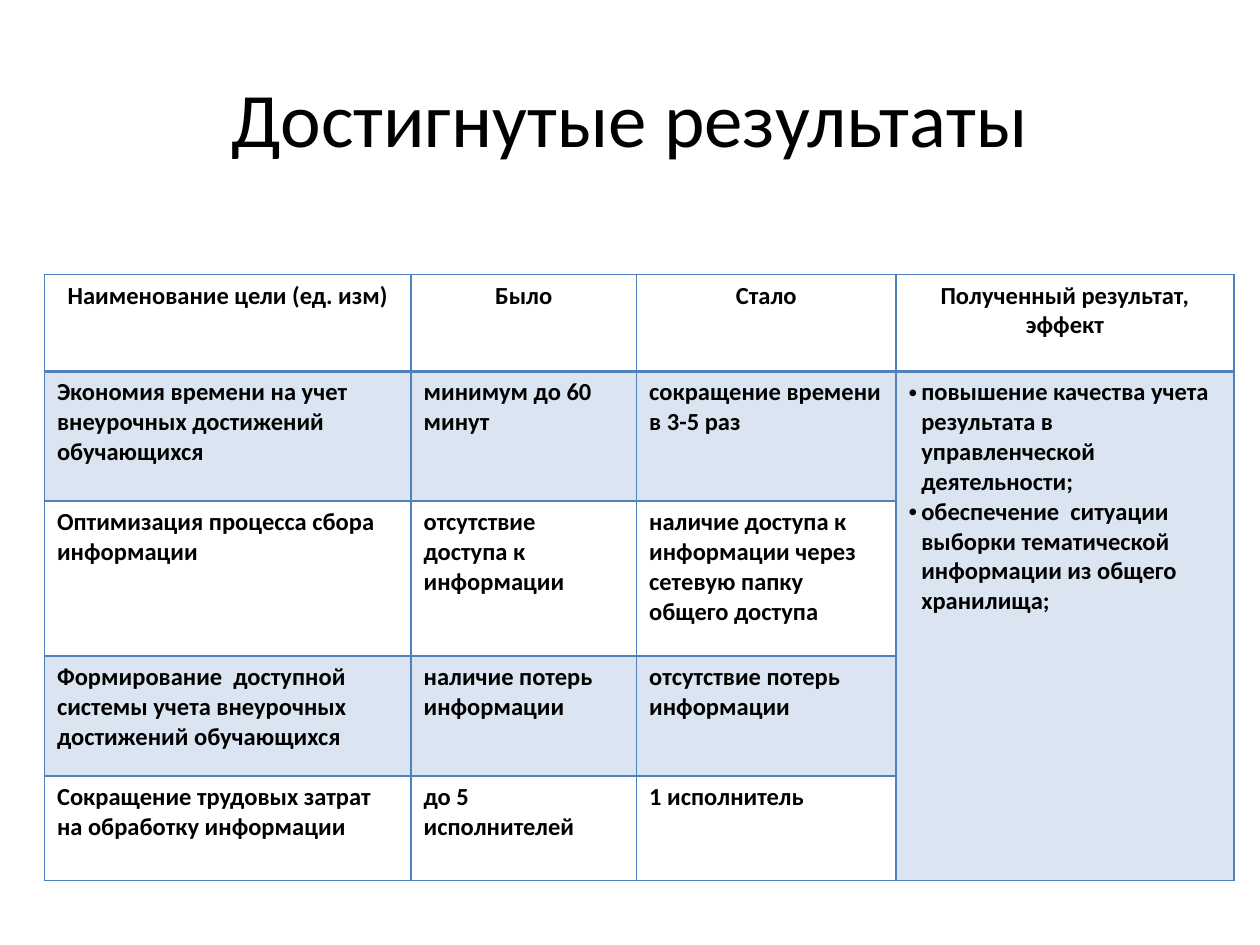
import pptx
import pptx.util
import pptx.dml.color
import pptx.enum.text
import pptx.oxml.ns
import lxml.etree

Pt = pptx.util.Pt
ALIGN = pptx.enum.text.PP_ALIGN
FONT = "Calibri"
COLORS = {"text": "000000", "blue": "4F81BD"}
WIDTHS = [209.5, 128.9, 148.3, 193]
HEIGHTS = [55.4, 74.2, 88.6, 68.4, 59.8]
ROWS = [
    ["Наименование цели (ед. изм)", "Было", "Стало", "Полученный результат, эффект"],
    ["Экономия времени на учет внеурочных достижений обучающихся",
     "минимум до 60 минут", "сокращение времени в 3-5 раз",
     "повышение качества учета результата в управленческой деятельности;\n"
     "обеспечение  ситуации выборки тематической информации из общего хранилища;"],
    ["Оптимизация процесса сбора информации", "отсутствие доступа к информации",
     "наличие доступа к информации через сетевую папку общего доступа", ""],
    ["Формирование  доступной системы учета внеурочных достижений обучающихся",
     "наличие потерь информации", "отсутствие потерь информации", ""],
    ["Сокращение трудовых затрат на обработку информации",
     "до 5 исполнителей", "1 исполнитель", ""],
]


def add_node(parent, tag, **attrs):
    """Append a drawing element with the given attributes."""
    node = lxml.etree.SubElement(parent, pptx.oxml.ns.qn(tag))
    for key, value in attrs.items():
        node.set(key, str(value))
    return node


def style_text(para, size, bold, align):
    """Format every run of a paragraph."""
    para.alignment = align
    for run in para.runs:
        run.font.name = FONT
        run.font.size = Pt(size)
        run.font.bold = bold
        run.font.color.rgb = pptx.dml.color.RGBColor.from_string(COLORS["text"])


def add_title(slide, text):
    """Add the centred heading."""
    box = slide.shapes.add_textbox(Pt(36), Pt(21.6), Pt(648), Pt(90))
    frame = box.text_frame
    frame.word_wrap = True
    frame.vertical_anchor = pptx.enum.text.MSO_ANCHOR.MIDDLE
    frame.text = text
    style_text(frame.paragraphs[0], 44, False, ALIGN.CENTER)


def add_bullet(para):
    """Give a paragraph a hanging bullet."""
    props = para._p.get_or_add_pPr()
    props.set("marL", str(Pt(7.2)))
    props.set("indent", str(-Pt(7.2)))
    add_node(props, "a:buFont", typeface="Arial")
    add_node(props, "a:buChar", char="•")


def add_borders(cell, top, bottom):
    """Draw the four cell borders in blue."""
    props = cell._tc.get_or_add_tcPr()
    for side, width in (("L", 1), ("R", 1), ("T", top), ("B", bottom)):
        line = add_node(props, f"a:ln{side}", w=Pt(width))
        fill = add_node(line, "a:solidFill")
        add_node(fill, "a:srgbClr", val=COLORS["blue"])


def fill_cell(cell, tinted):
    """Tint a cell with pale blue or leave it clear."""
    if not tinted:
        cell.fill.background()
        return
    cell.fill.solid()
    cell.fill.fore_color.rgb = pptx.dml.color.RGBColor.from_string(COLORS["blue"])
    color = cell._tc.tcPr.find(".//" + pptx.oxml.ns.qn("a:solidFill") + "[last()]/")
    for fill in cell._tc.tcPr.findall(pptx.oxml.ns.qn("a:solidFill")):
        color = fill[0]
    add_node(color, "a:alpha", val=20000)


def add_grid(slide):
    """Add the table of results."""
    shape = slide.shapes.add_table(len(ROWS), len(WIDTHS), Pt(25.4), Pt(156.8),
                                   Pt(sum(WIDTHS)), Pt(sum(HEIGHTS)))
    table = shape.table
    table.first_row = table.horz_banding = False
    for col, width in zip(table.columns, WIDTHS):
        col.width = Pt(width)
    last = len(WIDTHS) - 1
    for i, texts in enumerate(ROWS):
        table.rows[i].height = Pt(HEIGHTS[i])
        for j, text in enumerate(texts):
            cell = table.cell(i, j)
            cell.text_frame.text = text
            add_borders(cell, 2 if i == 1 else 1, 2 if i == 0 else 1)
            fill_cell(cell, i % 2 == 1 or (i > 0 and j == last))
            for para in cell.text_frame.paragraphs:
                if i == 1 and j == last:
                    add_bullet(para)
                style_text(para, 14, True, ALIGN.LEFT if i else ALIGN.CENTER)
    table.cell(1, last).merge(table.cell(len(ROWS) - 1, last))


def main():
    """Build and save the slide."""
    deck = pptx.Presentation()
    deck.slide_width, deck.slide_height = Pt(720), Pt(540)
    slide = deck.slides.add_slide(deck.slide_layouts[6])
    add_title(slide, "Достигнутые результаты")
    add_grid(slide)
    deck.save("out.pptx")


if __name__ == "__main__":
    main()
